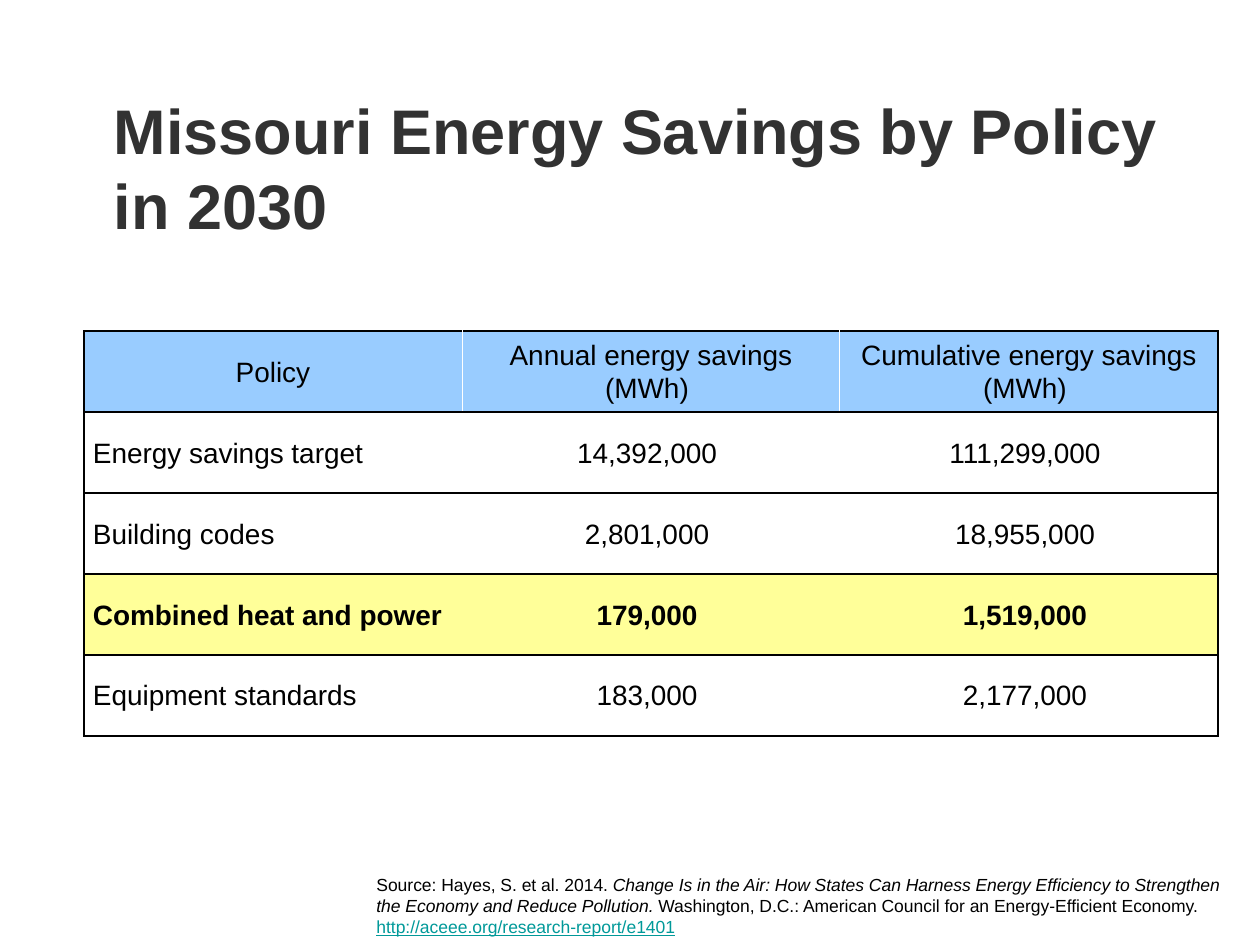
"""Build the slide on Missouri energy savings by policy."""
import pptx
import pptx.dml.color
import pptx.enum.text
import pptx.oxml.ns
import pptx.util
from lxml import etree

PX = 914400 // 126
FONT = "Arial"
COLORS = {
    "title": "323232", "text": "000000", "link": "009999", "border": "000000",
    "divider": "FFFFFF", "header": "99CCFF", "highlight": "FFFF99", "body": "FFFFFF",
}
TITLE = "Missouri Energy Savings by Policy in 2030"
POLICIES = [
    ("Policy", "Annual energy savings (MWh) ", "Cumulative energy savings (MWh) "),
    ("Energy savings target", "14,392,000 ", "111,299,000 "),
    ("Building codes", "2,801,000 ", "18,955,000 "),
    ("Combined heat and power", "179,000 ", "1,519,000 "),
    ("Equipment standards", "183,000 ", "2,177,000 "),
]
HIGHLIGHTED_ROW = 3
CITATION = [
    ("Source: Hayes, S. et al. 2014. ", {}),
    ("Change Is in the Air: How States Can Harness Energy Efficiency to Strengthen "
     "the Economy and Reduce Pollution. ", {"italic": True}),
    ("Washington, D.C.: American Council for an Energy-Efficient Economy. ", {}),
    ("http://aceee.org/research-report/e1401", {"color": "link", "underline": True}),
]
TITLE_BOX = (105, 84, 1092, 158)
TABLE_LEFT, TABLE_TOP, COLUMN_WIDTH, ROW_HEIGHT = 84, 331, 378, 81
CITATION_BOX = (364, 868, 892, 77)
CELL_INSET = 9


def px(length):
    return pptx.util.Emu(length * PX)


def rgb(name):
    return pptx.dml.color.RGBColor.from_string(COLORS[name])


def add_run(paragraph, text, size, color="text", bold=False, italic=False, underline=False):
    run = paragraph.add_run()
    run.text = text
    font = run.font
    font.name, font.size = FONT, pptx.util.Pt(size)
    font.bold, font.italic, font.underline = bold, italic, underline
    font.color.rgb = rgb(color)


def add_text_frame(slide, box):
    frame = slide.shapes.add_textbox(*map(px, box)).text_frame
    frame.word_wrap = True
    return frame


def set_border(cell, side, color, points):
    properties = cell._tc.get_or_add_tcPr()
    line = etree.SubElement(properties, pptx.oxml.ns.qn("a:ln" + side),
                            w=str(pptx.util.Pt(points)))
    if color is None:
        etree.SubElement(line, pptx.oxml.ns.qn("a:noFill"))
    else:
        fill = etree.SubElement(line, pptx.oxml.ns.qn("a:solidFill"))
        etree.SubElement(fill, pptx.oxml.ns.qn("a:srgbClr"), val=COLORS[color])


def fill_cell(cell, text, row, column):
    header = row == 0
    divider = ("divider", 0.5) if header else (None, 0.5)
    outer = ("border", 1)
    last_column = len(POLICIES[0]) - 1
    set_border(cell, "L", *(outer if column == 0 else divider))
    set_border(cell, "R", *(outer if column == last_column else divider))
    set_border(cell, "T", *outer)
    set_border(cell, "B", *outer)
    highlighted = row == HIGHLIGHTED_ROW
    cell.fill.solid()
    cell.fill.fore_color.rgb = rgb(
        "header" if header else "highlight" if highlighted else "body")
    cell.margin_left = cell.margin_right = px(CELL_INSET)
    cell.margin_top = cell.margin_bottom = 0
    cell.vertical_anchor = pptx.enum.text.MSO_ANCHOR.MIDDLE
    paragraph = cell.text_frame.paragraphs[0]
    align = pptx.enum.text.PP_ALIGN
    paragraph.alignment = align.CENTER if header or column else align.LEFT
    paragraph.line_spacing = 1.07
    paragraph.space_after = pptx.util.Pt(8)
    add_run(paragraph, text, 16, bold=highlighted)


def add_policy_table(slide):
    rows, columns = len(POLICIES), len(POLICIES[0])
    table = slide.shapes.add_table(
        rows, columns, px(TABLE_LEFT), px(TABLE_TOP),
        px(columns * COLUMN_WIDTH), px(rows * ROW_HEIGHT)).table
    table.first_row = table.horz_banding = False
    for row, texts in enumerate(POLICIES):
        for column, text in enumerate(texts):
            fill_cell(table.cell(row, column), text, row, column)


def main():
    deck = pptx.Presentation()
    deck.slide_width, deck.slide_height = px(1260), px(945)
    slide = deck.slides.add_slide(deck.slide_layouts[6])

    title = add_text_frame(slide, TITLE_BOX)
    title.vertical_anchor = pptx.enum.text.MSO_ANCHOR.BOTTOM
    title.margin_left, title.margin_bottom = px(9), 0
    title.paragraphs[0].line_spacing = pptx.util.Pt(43)
    add_run(title.paragraphs[0], TITLE, 36, "title", bold=True)

    add_policy_table(slide)

    citation = add_text_frame(slide, CITATION_BOX)
    for text, style in CITATION:
        add_run(citation.paragraphs[0], text, 10, **style)

    deck.save("out.pptx")


if __name__ == "__main__":
    main()
